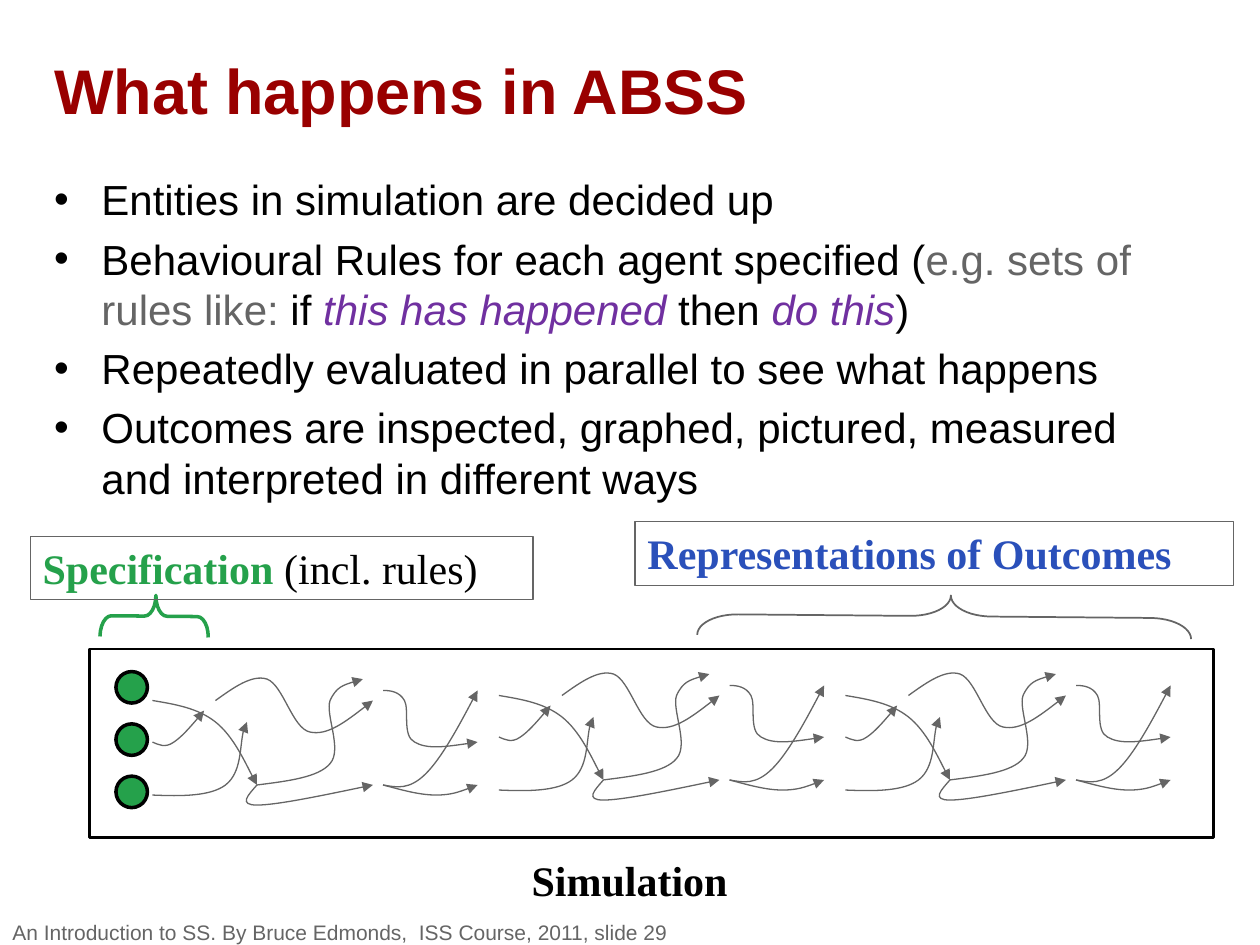
from lxml.etree import SubElement
from pptx import Presentation
from pptx.dml.color import RGBColor
from pptx.enum.shapes import MSO_SHAPE as Shape
from pptx.enum.text import MSO_ANCHOR as Anchor, MSO_AUTO_SIZE as AutoSize, PP_ALIGN as Align
from pptx.oxml.ns import qn
from pptx.util import Inches, Pt

# Colours and text formats
BLACK, WHITE, GREY, RED = "000000", "FFFFFF", "656565", "990000"
GREEN, BLUE, PURPLE = "25A14B", "2A50BA", "7030A0"
TITLE = dict(name="Arial", size=Pt(36), bold=True)
BODY = dict(name="Arial", size=Pt(24), bold=False, italic=False)
STRESS = BODY | dict(italic=True)
LABEL = dict(name="Times New Roman", size=Pt(24), bold=True)
PLAIN = LABEL | dict(bold=False)
FOOTER = dict(name="Arial", size=Pt(12))

# Content: a line is a list of (text, colour, format)
title_line = [("What happens in ABSS", RED, TITLE)]
bullets = [
    [("Entities in simulation are decided up", BLACK, BODY)],
    [("Behavioural Rules for each agent specified (", BLACK, BODY),
     ("e.g. sets of rules like:", GREY, BODY), (" if ", BLACK, BODY),
     ("this has happened ", PURPLE, STRESS), ("then ", BLACK, BODY),
     ("do this", PURPLE, STRESS), (")", BLACK, BODY)],
    [("Repeatedly evaluated in parallel to see what happens", BLACK, BODY)],
    [("Outcomes are inspected, graphed, pictured, measured and interpreted "
      "in different ways", BLACK, BODY)],
]
# Labels: place, outline colour, line of text
labels = [
    ((4.12, 6.73, 1.92, 0.5), None, [("Simulation", BLACK, LABEL)]),
    ((5.04, 4.14, 4.75, 0.51), GREY, [("Representations of Outcomes", BLUE, LABEL)]),
    ((0.24, 4.26, 3.99, 0.5), GREY,
     [("Specification ", GREEN, LABEL), ("(incl. rules)", BLACK, PLAIN)]),
]
footer_line = [("An Introduction to SS. By Bruce Edmonds,  ISS Course, 2011, slide 29",
                GREY, FOOTER)]

# Braces: place before turning, colour, line width, adjustments
braces = [
    ((7.33, 2.93, 0.33, 3.92), GREY, 1, (0.979, 0.513)),
    ((1.06, 4.46, 0.33, 0.86), GREEN, 2, (0.271, 0.513)),
]

# One round of interaction: a start point, then three points per curve
strokes = [
    [(0, .21), (.18, .24), (.36, .27), (.5, .38), (.64, .49), (.78, .79), (.83, .88)],
    [(0, .54), (.05, .56), (.1, .59), (.17, .54), (.23, .5), (.32, .4), (.41, .29)],
    [(0, .96), (.23, .97), (.46, .97), (.58, .88), (.71, .78), (.69, .46), (.75, .38)],
    [(.5, .21), (.64, .11), (.79, 0), (.91, .04), (1.04, .09), (1.11, .43), (1.25, .46),
     (1.39, .49), (1.57, .35), (1.75, .21)],
    [(.83, .88), (1.07, .85), (1.32, .82), (1.41, .71), (1.51, .6), (1.37, .32),
     (1.41, .21), (1.46, .1), (1.56, .07), (1.67, .04)],
    [(.83, .88), (.76, .96), (.68, 1.04), (.83, 1.04), (.98, 1.04), (1.37, .96), (1.75, .88)],
    [(1.83, .88), (1.94, .9), (2.04, .92), (2.17, .79), (2.29, .67), (2.44, .4), (2.58, .13)],
    [(1.83, .88), (1.98, .92), (2.12, .96), (2.25, .96), (2.37, .96), (2.48, .92), (2.58, .88)],
    [(1.83, .13), (1.89, .13), (1.96, .14), (2, .21), (2.04, .28), (1.98, .49),
     (2.08, .54), (2.18, .6), (2.38, .57), (2.58, .54)],
]
ROUND_WIDTH = 2.75
round_origins = [(1.21 + i * ROUND_WIDTH, 5.35 if i == 0 else 5.31) for i in range(3)]
AGENT_SIZE, AGENT_LEFT, AGENT_TOP, AGENT_STEP = 0.25, 0.92, 5.33, 0.415


def colour(text):
    return RGBColor.from_string(text)


def inches(place):
    return [Inches(value) for value in place]


def style(shape, fill=None, line=None, width=0.75):
    if fill:
        shape.fill.solid()
        shape.fill.fore_color.rgb = colour(fill)
    else:
        shape.fill.background()
    if line:
        shape.line.color.rgb = colour(line)
        shape.line.width = Pt(width)
    else:
        shape.line.fill.background()


def write(para, line):
    for text, ink, values in line:
        span = para.add_run()
        span.text = text
        span.font.color.rgb = colour(ink)
        for name, value in values.items():
            setattr(span.font, name, value)


def move(box, place):
    box.left, box.top, box.width, box.height = inches(place)


def add_preset(page, kind, place, **look):
    shape = page.shapes.add_shape(kind, *inches(place))
    shape.shadow.inherit = False
    style(shape, **look)
    return shape


def add_text(page, place, line):
    box = page.shapes.add_textbox(*inches(place))
    box.text_frame.word_wrap = True
    write(box.text_frame.paragraphs[0], line)
    return box


def add_curve(page, points):
    """Draw a curved arrow; each three points after the first make one Bezier."""
    start, *rest = [tuple(inches(point)) for point in points]
    builder = page.shapes.build_freeform(*start)
    builder.add_line_segments(rest, close=False)
    curve = builder.convert_to_shape()
    curve.shadow.inherit = False
    style(curve, line=GREY)
    outline = next(curve.element.iter(qn("a:path")))
    segments = outline.findall(qn("a:lnTo"))
    for i in range(0, len(segments), 3):
        bezier = SubElement(outline, qn("a:cubicBezTo"))
        for segment in segments[i:i + 3]:
            bezier.append(segment[0])
            outline.remove(segment)
    SubElement(curve.line._get_or_add_ln(), qn("a:tailEnd"), type="triangle")


def main():
    deck = Presentation()
    deck.slide_width, deck.slide_height = Inches(10), Inches(7.5)
    page = deck.slides.add_slide(deck.slide_layouts[1])

    # Title and bullets
    title, body = page.placeholders
    move(title, (0.33, 0.25, 8.42, 0.92))
    move(body, (0.33, 1.33, 9.25, 2.61))
    for box in (title, body):
        box.text_frame.auto_size = AutoSize.NONE
    title.text_frame.vertical_anchor = Anchor.MIDDLE
    heading = title.text_frame.paragraphs[0]
    heading.alignment = Align.LEFT
    write(heading, title_line)
    for i, line in enumerate(bullets):
        para = body.text_frame.add_paragraph() if i else body.text_frame.paragraphs[0]
        para.space_before = Pt(5 if i else 0)
        write(para, line)

    # Simulation frame, braces and labels
    add_preset(page, Shape.RECTANGLE, (0.71, 5.15, 8.92, 1.5),
               fill=WHITE, line=BLACK, width=1.5)
    for place, ink, width, adjustments in braces:
        brace = add_preset(page, Shape.RIGHT_BRACE, place, line=ink, width=width)
        brace.rotation = 270.5
        for i, value in enumerate(adjustments):
            brace.adjustments[i] = value
    for place, outline, line in labels:
        style(add_text(page, place, line), fill=None if outline else WHITE, line=outline)

    # Interactions and agents
    for left, top in round_origins:
        for stroke in strokes:
            add_curve(page, [(left + x, top + y) for x, y in stroke])
    for i in range(3):
        add_preset(page, Shape.OVAL,
                   (AGENT_LEFT, AGENT_TOP + i * AGENT_STEP, AGENT_SIZE, AGENT_SIZE),
                   fill=GREEN, line=BLACK, width=2)

    # Footer
    footer = add_text(page, (0, 7.29, 10, 0.21), footer_line)
    footer.text_frame.vertical_anchor = Anchor.MIDDLE
    deck.save("out.pptx")


if __name__ == "__main__":
    main()
